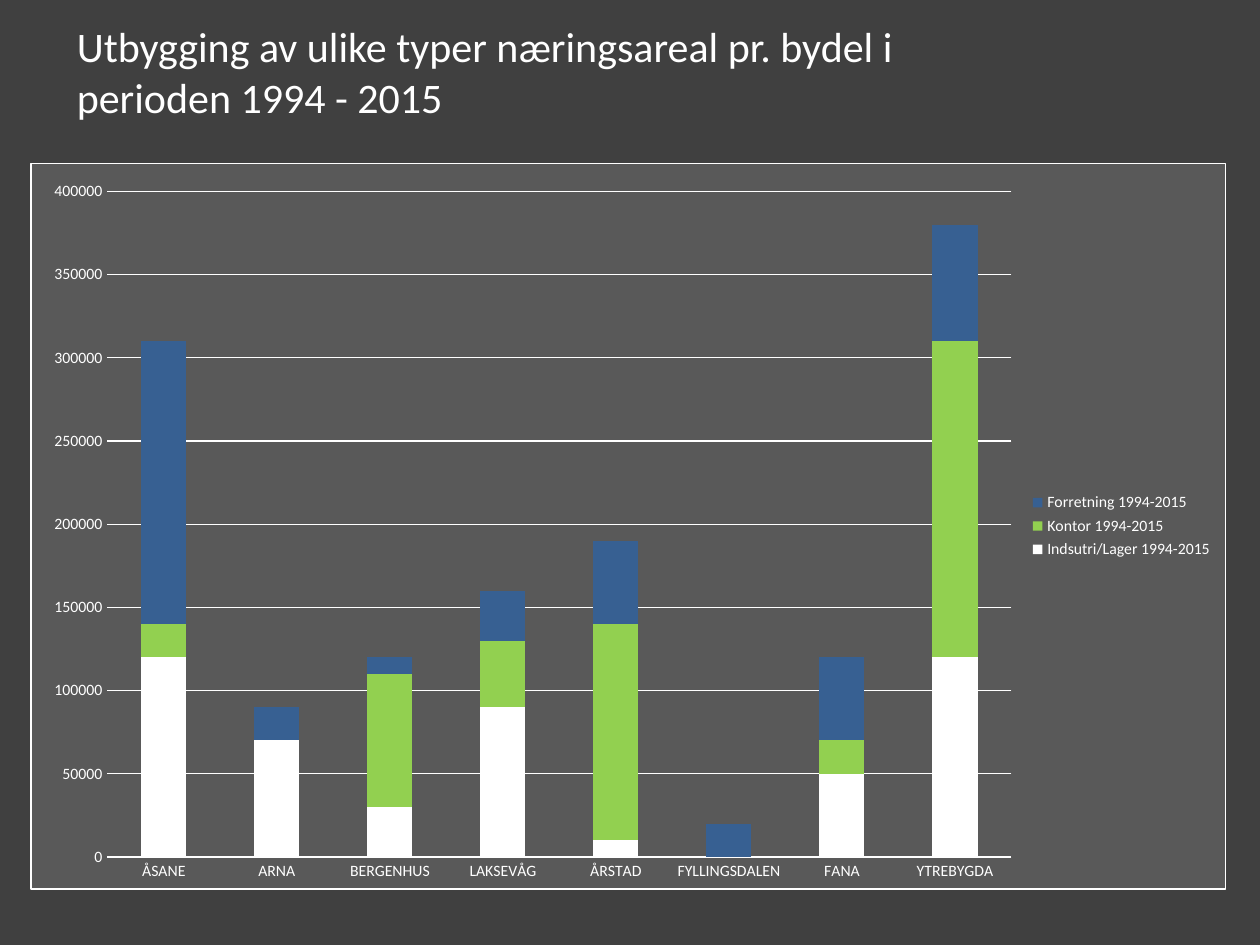
from lxml import etree
from pptx import Presentation
from pptx.chart.data import CategoryChartData
from pptx.dml.color import RGBColor
from pptx.enum.chart import XL_CHART_TYPE, XL_LEGEND_POSITION, XL_TICK_MARK
from pptx.enum.text import MSO_ANCHOR, MSO_AUTO_SIZE, PP_ALIGN
from pptx.oxml import parse_xml
from pptx.oxml.ns import nsdecls, qn
from pptx.util import Inches, Pt

STACKED = XL_CHART_TYPE.COLUMN_STACKED
LEGEND_RIGHT = XL_LEGEND_POSITION.RIGHT
NO_TICK = XL_TICK_MARK.NONE
MIDDLE = MSO_ANCHOR.MIDDLE
NO_AUTOFIT = MSO_AUTO_SIZE.NONE
LEFT = PP_ALIGN.LEFT

FONT = "Calibri"
COLORS = {
    "background": "404040",
    "panel": "595959",
    "light": "FFFFFF",
    "office": "92D050",
    "retail": "376092",
}
LINE_WIDTH = 0.75

DISTRICTS = ["ÅSANE", "ARNA", "BERGENHUS", "LAKSEVÅG", "ÅRSTAD",
             "FYLLINGSDALEN", "FANA", "YTREBYGDA"]
AREAS = [
    ("Indsutri/Lager 1994-2015", "light",
     [120000, 70000, 30000, 90000, 10000, 0, 50000, 120000]),
    ("Kontor 1994-2015", "office",
     [20000, 0, 80000, 40000, 130000, 0, 20000, 190000]),
    ("Forretning 1994-2015", "retail",
     [170000, 20000, 10000, 30000, 50000, 20000, 50000, 70000]),
]
PLOT_AREA = {"x": 0.064, "y": 0.039, "w": 0.757, "h": 0.917}


def rgb(name):
    return RGBColor.from_string(COLORS[name])


def set_attributes(target, values):
    for name, value in values.items():
        setattr(target, name, value)


def format_font(font, size):
    set_attributes(font, {"name": FONT, "size": Pt(size), "bold": False})
    font.color.rgb = rgb("light")


def format_line(line):
    line.color.rgb = rgb("light")
    line.width = Pt(LINE_WIDTH)


def paint_background(slide):
    fill = slide.background.fill
    fill.solid()
    fill.fore_color.rgb = rgb("background")


def add_title(slide, text):
    title = slide.shapes.title
    set_attributes(title, {"left": Inches(0.51), "top": Inches(0.29),
                           "width": Inches(7.87), "height": Inches(0.55)})
    frame = title.text_frame
    frame.text = text
    set_attributes(frame, {"word_wrap": True, "auto_size": NO_AUTOFIT,
                           "vertical_anchor": MIDDLE})
    paragraph = frame.paragraphs[0]
    paragraph.alignment = LEFT
    format_font(paragraph.runs[0].font, 24)


def frame_chart(chart):
    """Fill and border of the whole chart area."""
    panel = parse_xml(
        f'<c:spPr {nsdecls("c", "a")}>'
        f'<a:solidFill><a:srgbClr val="{COLORS["panel"]}"/></a:solidFill>'
        f'<a:ln w="{Pt(LINE_WIDTH)}"><a:solidFill>'
        f'<a:srgbClr val="{COLORS["light"]}"/></a:solidFill></a:ln></c:spPr>')
    chart.element.find(qn("c:chart")).addnext(panel)


def place_plot(chart):
    """Fixed inner position of the plot, as fractions of the chart."""
    plot_area = chart.element.find(qn("c:chart")).find(qn("c:plotArea"))
    layout = plot_area.find(qn("c:layout"))
    if layout is None:
        layout = etree.Element(qn("c:layout"))
        plot_area.insert(0, layout)
    manual = etree.SubElement(layout, qn("c:manualLayout"))
    settings = {"layoutTarget": "inner", "xMode": "edge", "yMode": "edge",
                **PLOT_AREA}
    for tag, value in settings.items():
        etree.SubElement(manual, qn(f"c:{tag}")).set("val", str(value))


def format_axes(chart):
    districts, area = chart.category_axis, chart.value_axis
    for axis in (districts, area):
        set_attributes(axis, {"major_tick_mark": NO_TICK,
                              "minor_tick_mark": NO_TICK})
        format_font(axis.tick_labels.font, 9)
    format_line(districts.format.line)

    set_attributes(area, {"minimum_scale": 0, "maximum_scale": 400000,
                          "major_unit": 50000, "has_major_gridlines": True})
    area.format.line.fill.background()
    format_line(area.major_gridlines.format.line)
    set_attributes(area.tick_labels, {"number_format": "0",
                                      "number_format_is_linked": False})


def add_area_chart(slide):
    data = CategoryChartData(number_format="0")
    data.categories = DISTRICTS
    for name, _, values in AREAS:
        data.add_series(name, values)
    chart = slide.shapes.add_chart(
        STACKED, Inches(0.24), Inches(1.29), Inches(9.49), Inches(5.77),
        data).chart
    set_attributes(chart, {"has_title": False, "has_legend": True})
    format_font(chart.font, 10)

    # Stacked columns
    plot = chart.plots[0]
    set_attributes(plot, {"gap_width": 150, "overlap": 100,
                          "vary_by_categories": False})
    for series, (_, color, _) in zip(plot.series, AREAS):
        series.invert_if_negative = False
        series.format.fill.solid()
        series.format.fill.fore_color.rgb = rgb(color)

    # Legend, axes and surroundings
    set_attributes(chart.legend, {"position": LEGEND_RIGHT,
                                  "include_in_layout": False})
    format_font(chart.legend.font, 9)
    format_axes(chart)
    place_plot(chart)
    frame_chart(chart)


def main():
    prs = Presentation()
    set_attributes(prs, {"slide_width": Inches(10),
                         "slide_height": Inches(7.5)})
    slide = prs.slides.add_slide(prs.slide_layouts[5])
    paint_background(slide)
    add_title(slide, "Utbygging av ulike typer næringsareal pr. bydel i "
                     "perioden 1994 - 2015")
    add_area_chart(slide)
    prs.save("out.pptx")


if __name__ == "__main__":
    main()
